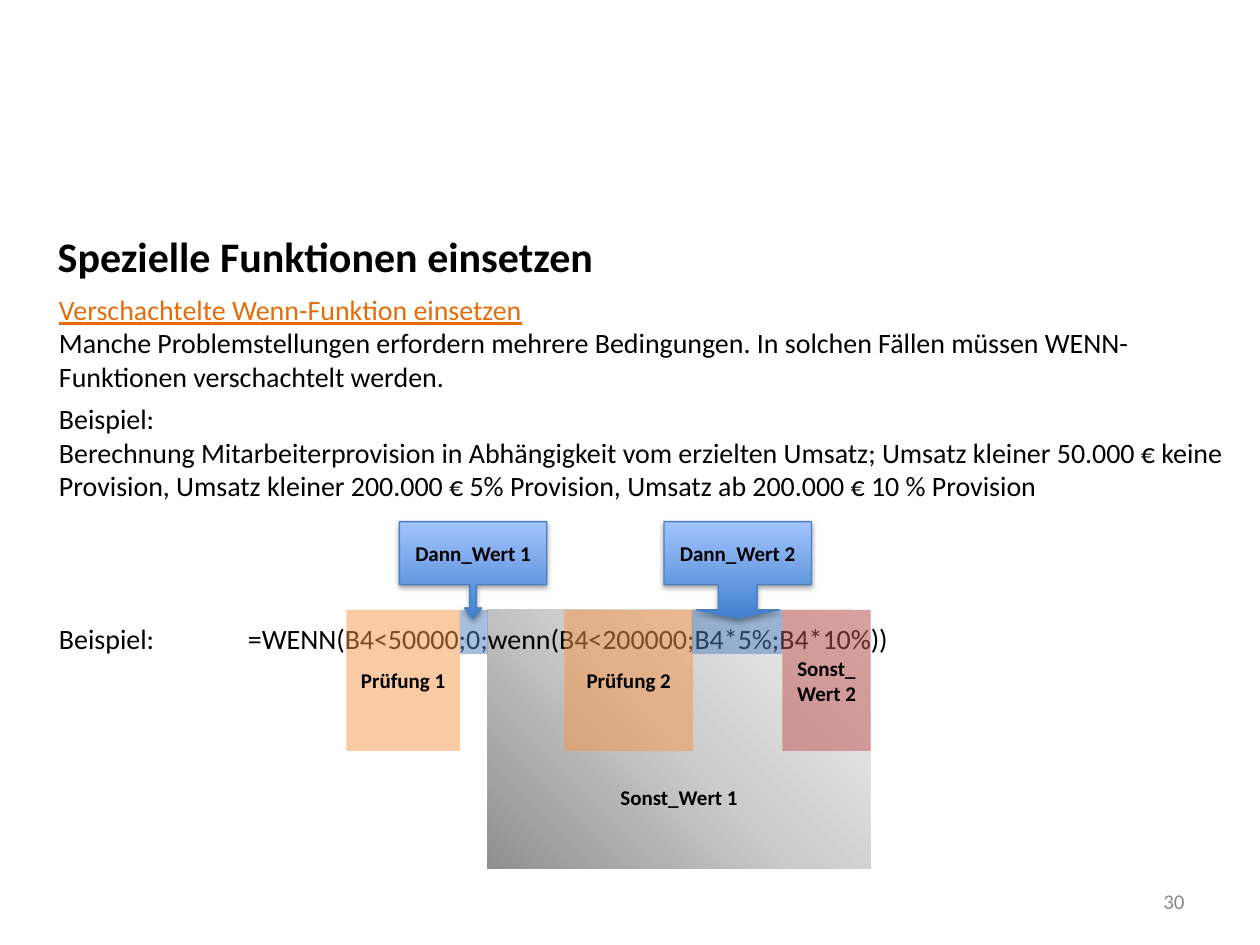
from dataclasses import dataclass

from pptx import Presentation
from pptx.dml.color import RGBColor as Color
from pptx.enum.shapes import MSO_SHAPE as Shape
from pptx.enum.text import MSO_ANCHOR as Anchor, PP_ALIGN as Align
from pptx.oxml import parse_xml
from pptx.oxml.ns import nsdecls, qn
from pptx.util import Inches, Pt


@dataclass(frozen=True)
class Theme:
    font: str = "Calibri"
    ink: str = "000000"
    accent: str = "E46C0A"
    muted: str = "898989"
    test: str = "F79646"
    value: str = "4F81BD"
    otherwise: str = "C0504D"
    outline: str = "4B7EBC"
    callout: tuple = ("3F80CE", "A4C4FF")
    panel: tuple = ((0, "909090"), (50, "CCCCCC"), (100, "F2F2F2"))
    title_size: int = 24
    body_size: int = 16
    label_size: int = 12


class SlideBuilder:
    def __init__(self, slide, theme):
        self.slide = slide
        self.theme = theme

    def add_span(self, para, text, size, color=None, **formats):
        span = para.add_run()
        span.text = text
        values = {"name": self.theme.font, "size": Pt(size), **formats}
        for name, value in values.items():
            setattr(span.font, name, value)
        span.font.color.rgb = Color.from_string(color or self.theme.ink)

    def text_box(self, left, top, width, height, anchor=Anchor.TOP):
        box = self.slide.shapes.add_textbox(*map(Inches, (left, top, width, height)))
        frame = box.text_frame
        frame.word_wrap = True
        frame.vertical_anchor = anchor
        return frame

    def line_of_text(self, place, text, size, color=None, align=Align.LEFT,
                     anchor=Anchor.TOP, **formats):
        para = self.text_box(*place, anchor=anchor).paragraphs[0]
        para.alignment = align
        self.add_span(para, text, size, color, **formats)

    def body(self, place, paragraphs):
        frame = self.text_box(*place)
        for index, (text, gap, formats) in enumerate(paragraphs):
            para = frame.add_paragraph() if index else frame.paragraphs[0]
            if gap:
                para.space_before = Pt(gap)
            self.add_span(para, text, self.theme.body_size, **formats)
        return frame

    def tab_stops(self, para, stops):
        marks = "".join(f'<a:tab pos="{Inches(stop)}" algn="l"/>' for stop in stops)
        tabs = parse_xml(f'<a:tabLst {nsdecls("a")}>{marks}</a:tabLst>')
        para._p.get_or_add_pPr().append(tabs)

    def shape(self, kind, left, top, width, height, label=""):
        shape = self.slide.shapes.add_shape(kind, *map(Inches, (left, top, width, height)))
        shape.shadow.inherit = False
        shape.line.fill.background()
        if label:
            frame = shape.text_frame
            frame.word_wrap = True
            frame.vertical_anchor = Anchor.MIDDLE
            para = frame.paragraphs[0]
            para.alignment = Align.CENTER
            self.add_span(para, label, self.theme.label_size, bold=True)
        return shape

    def highlight(self, left, top, width, height, color, label=""):
        shape = self.shape(Shape.RECTANGLE, left, top, width, height, label)
        shape.fill.solid()
        shape.fill.fore_color.rgb = Color.from_string(color)
        tint = next(shape._element.spPr.iter(qn("a:srgbClr")))
        tint.append(parse_xml(f'<a:alpha {nsdecls("a")} val="50000"/>'))

    def panel(self, left, top, width, height, label, label_drop):
        shape = self.shape(Shape.RECTANGLE, left, top, width, height, label)
        shape.text_frame.margin_top = Inches(label_drop)
        shape.fill.gradient()
        stops = "".join(
            f'<a:gs pos="{place * 1000}"><a:srgbClr val="{color}"/></a:gs>'
            for place, color in self.theme.panel)
        radial = parse_xml(
            f'<a:gradFill {nsdecls("a")} rotWithShape="1"><a:gsLst>{stops}</a:gsLst>'
            '<a:path path="circle"><a:fillToRect t="100000" r="100000"/></a:path>'
            '</a:gradFill>')
        properties = shape._element.spPr
        properties.replace(properties.find(qn("a:gradFill")), radial)

    def callout(self, left, top, width, height, label, adjustments):
        shape = self.shape(Shape.DOWN_ARROW_CALLOUT, left, top, width, height, label)
        for index, value in enumerate(adjustments):
            shape.adjustments[index] = value
        shape.fill.gradient()
        shape.fill.gradient_angle = 90
        for stop, color in zip(shape.fill.gradient_stops, self.theme.callout):
            stop.color.rgb = Color.from_string(color)
        shape.line.color.rgb = Color.from_string(self.theme.outline)
        shape.line.width = Pt(0.75)
        shape._element.spPr.find(qn("a:effectLst")).append(parse_xml(
            f'<a:outerShdw {nsdecls("a")} blurRad="{Pt(3.1)}" dist="{Pt(1.8)}" '
            'dir="5400000" rotWithShape="0"><a:srgbClr val="000000">'
            '<a:alpha val="35000"/></a:srgbClr></a:outerShdw>'))


def main():
    deck = Presentation()
    deck.slide_width, deck.slide_height = Inches(10), Inches(7.5)
    theme = Theme()
    page = SlideBuilder(deck.slides.add_slide(deck.slide_layouts[6]), theme)

    formula_top, test_height, value_height = 4.84, 1.12, 0.35
    callout_top, callout_width, callout_height = 4.14, 1.17, 0.77

    page.panel(3.87, formula_top, 3.04, 2.05, "Sonst_Wert 1", 0.97)

    body = page.body((0.37, 2.27, 9.63, 3.05), [
        ("Verschachtelte Wenn-Funktion einsetzen", 0,
         {"color": theme.accent, "underline": True}),
        ("Manche Problemstellungen erfordern mehrere Bedingungen. In solchen Fällen "
         "müssen WENN-Funktionen verschachtelt werden.", 0, {}),
        ("Beispiel:", 4.9, {}),
        ("Berechnung Mitarbeiterprovision in Abhängigkeit vom erzielten Umsatz; Umsatz "
         "kleiner 50.000 € keine Provision, Umsatz kleiner 200.000 € 5% Provision, "
         "Umsatz ab 200.000 € 10 % Provision", 0, {}),
        ("Beispiel:\t\t=WENN(B4<50000;0;wenn(B4<200000;B4*5%;B4*10%))", 68.4, {}),
    ])
    page.tab_stops(body.paragraphs[-1], (1, 1.5))

    page.line_of_text((0.36, 1.78, 9, 0.37), "Spezielle Funktionen einsetzen",
                      theme.title_size, bold=True)
    page.line_of_text((7.17, 6.95, 2.33, 0.4), "30", theme.label_size, theme.muted,
                      Align.RIGHT, Anchor.MIDDLE)

    for left, width, height, color, label in (
            (2.75, 0.9, test_height, theme.test, "Prüfung 1"),
            (4.48, 1.02, test_height, theme.test, "Prüfung 2"),
            (3.65, 0.22, value_height, theme.value, ""),
            (5.49, 0.72, value_height, theme.value, ""),
            (6.21, 0.7, test_height, theme.otherwise, "Sonst_Wert 2")):
        page.highlight(left, formula_top, width, height, color, label)

    for left, label, adjustments in (
            (3.17, "Dann_Wert 1", (0.07, 0.09, 0.11, 0.65)),
            (5.27, "Dann_Wert 2", (0.4, 0.43, 0.09, 0.65))):
        page.callout(left, callout_top, callout_width, callout_height, label, adjustments)

    deck.save("out.pptx")


if __name__ == "__main__":
    main()
